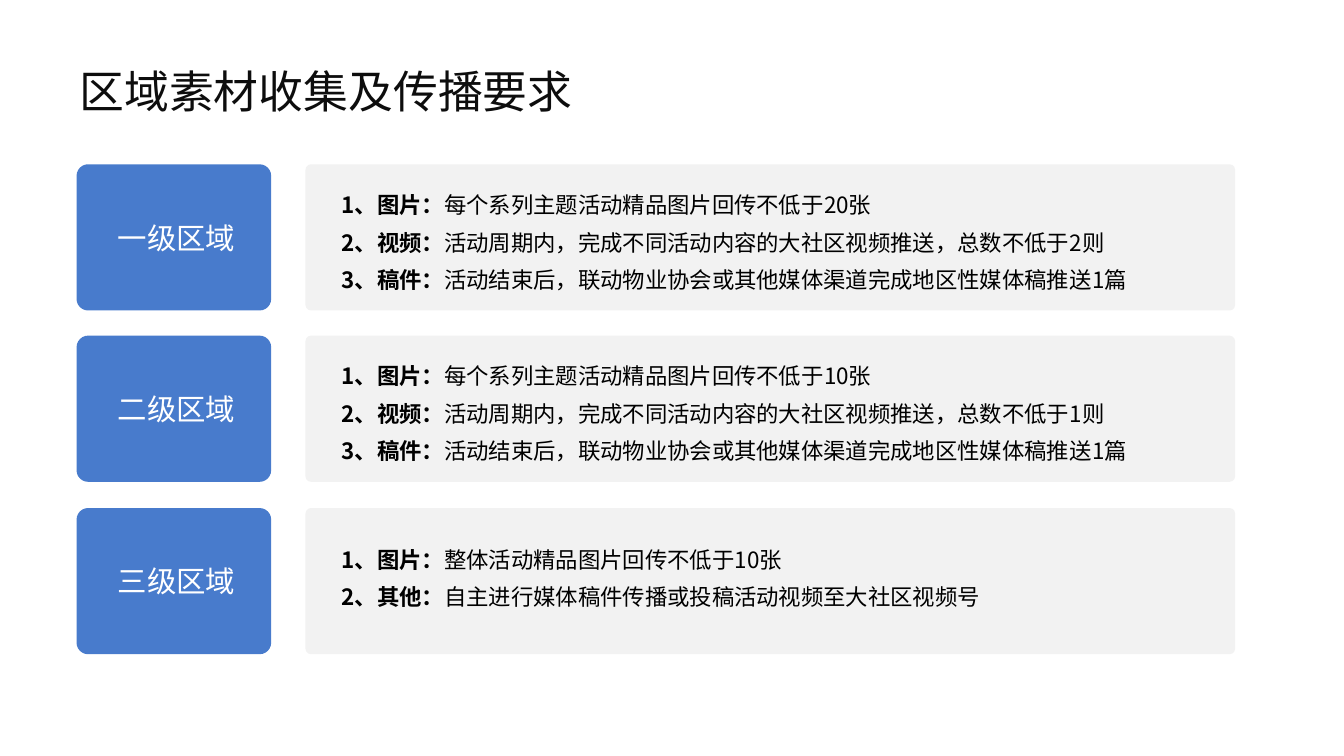
from lxml.etree import SubElement
from pptx import Presentation
from pptx.dml.color import RGBColor
from pptx.enum.shapes import MSO_SHAPE
from pptx.enum.text import MSO_ANCHOR, MSO_AUTO_SIZE, PP_ALIGN
from pptx.oxml.ns import qn
from pptx.util import Pt

# Content
TITLE = "区域素材收集及传播要求"
ARTICLE = ("稿件", "活动结束后，联动物业协会或其他媒体渠道完成地区性媒体稿推送1篇")
# Region name, offset of the text from the panel top, requirements
REGIONS = [
    ("一级区域", 11, [
        ("图片", "每个系列主题活动精品图片回传不低于20张"),
        ("视频", "活动周期内，完成不同活动内容的大社区视频推送，总数不低于2则"),
        ARTICLE,
    ]),
    ("二级区域", 11, [
        ("图片", "每个系列主题活动精品图片回传不低于10张"),
        ("视频", "活动周期内，完成不同活动内容的大社区视频推送，总数不低于1则"),
        ARTICLE,
    ]),
    ("三级区域", 22, [
        ("图片", "整体活动精品图片回传不低于10张"),
        ("其他", "自主进行媒体稿件传播或投稿活动视频至大社区视频号"),
    ]),
]

# Style and layout, in px (100 per inch)
FONT = "Noto Sans CJK JP"
BLUE, GREY, WHITE, BLACK, INK = "487BCC", "F2F2F2", "FFFFFF", "000000", "0D0D0D"
EMU_PER_PX = 9144
ROWS_TOP, ROWS_SPAN, CARD_H = 163, 341, 145
LINE_H, INSETS = 37, 9


def px(*lengths):
    return [n * EMU_PER_PX for n in lengths]


def rgb(color):
    return RGBColor.from_string(color)


def add_card(shapes, box, color, radius):
    sp = shapes.add_shape(MSO_SHAPE.ROUNDED_RECTANGLE, *px(*box))
    sp.adjustments[0] = radius
    sp.shadow.inherit = False
    sp.fill.solid()
    sp.fill.fore_color.rgb = rgb(color)
    sp.line.fill.background()


def add_text(shapes, box, paragraphs, size, color, align=PP_ALIGN.LEFT,
             spacing=None, anchor=MSO_ANCHOR.TOP, grow=True):
    """Each paragraph is a list of (text, bold) runs."""
    tf = shapes.add_textbox(*px(*box)).text_frame
    tf.word_wrap = True
    tf.vertical_anchor = anchor
    tf.auto_size = MSO_AUTO_SIZE.SHAPE_TO_FIT_TEXT if grow else MSO_AUTO_SIZE.NONE
    for i, runs in enumerate(paragraphs):
        p = tf.add_paragraph() if i else tf.paragraphs[0]
        p.alignment = align
        p.line_spacing = spacing
        for text, bold in runs:
            r = p.add_run()
            r.text = text
            r.font.size = Pt(size)
            r.font.bold = bold
            r.font.color.rgb = rgb(color)
            r.font.name = FONT
            SubElement(r.font._element, qn("a:ea"), typeface=FONT)


prs = Presentation()
prs.slide_width, prs.slide_height = px(1333, 750)
s = prs.slides.add_slide(prs.slide_layouts[6])

# Title
add_text(s.shapes, (69, 53, 1193, 80), [[(TITLE, False)]], 32, INK,
         spacing=0.9, anchor=MSO_ANCHOR.MIDDLE, grow=False)

# One group per region: requirement panel and region label
for i, (region, offset, items) in enumerate(REGIONS):
    top = ROWS_TOP + ROWS_SPAN * i // (len(REGIONS) - 1)
    shapes = s.shapes.add_group_shape().shapes
    lines = [[(f"{n}、{kind}：", True), (text, False)]
             for n, (kind, text) in enumerate(items, 1)]
    add_card(shapes, (303, top, 922, CARD_H), GREY, 0.038)
    add_text(shapes, (329, top + offset, 857, LINE_H * len(lines) + INSETS),
             lines, 16, BLACK, PP_ALIGN.JUSTIFY, spacing=1.4)
    add_card(shapes, (76, top, 193, CARD_H), BLUE, 0.079)
    add_text(shapes, (80, top + 50, 190, 45), [[(region, False)]], 21, WHITE,
             PP_ALIGN.CENTER)

prs.save("out.pptx")
